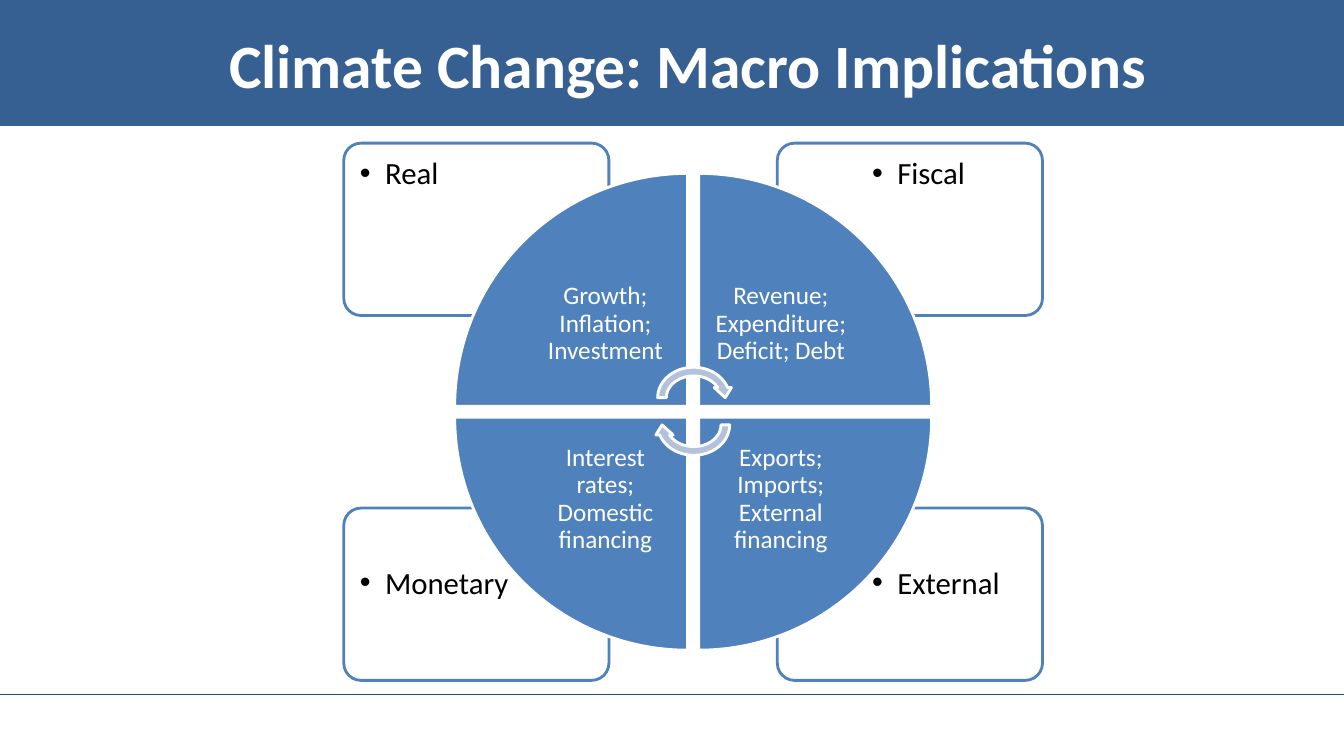
from lxml.etree import SubElement
from pptx import Presentation
from pptx.dml.color import RGBColor
from pptx.enum.shapes import MSO_CONNECTOR, MSO_SHAPE
from pptx.enum.text import MSO_ANCHOR, MSO_AUTO_SIZE, PP_ALIGN
from pptx.oxml.ns import qn
from pptx.util import Pt

PX = 9144  # EMU per px, 100 px to the inch
SLIDE_W, SLIDE_H = 1333, 750
COLORS = {"band": "376092", "rule": "1F497D", "accent": "4F81BD",
          "arrow": "B3C1DB", "white": "FFFFFF", "black": "000000"}


def rgb(name):
    return RGBColor.from_string(COLORS[name])


def emu(*lengths):
    return [length * PX for length in lengths]


class SlideBuilder:
    font = "Calibri"

    def __init__(self, slide):
        self.slide = slide
        self.shapes = slide.shapes

    def set_text(self, frame, text, size, color, align, anchor, inset, bold=False):
        frame.word_wrap = True
        frame.auto_size = MSO_AUTO_SIZE.NONE
        frame.vertical_anchor = anchor
        frame.margin_left = frame.margin_right = inset * PX
        frame.margin_top = frame.margin_bottom = inset * PX
        frame.text = text
        paragraph = frame.paragraphs[0]
        paragraph.alignment = align
        font = paragraph.runs[0].font
        font.name, font.size, font.bold = self.font, Pt(size), bold
        font.color.rgb = rgb(color)
        return paragraph

    def title(self, text, *box):
        heading = self.shapes.title
        self.shapes._spTree.append(heading._element)  # bring above the band
        heading.left, heading.top, heading.width, heading.height = emu(*box)
        self.set_text(heading.text_frame, text, 44, "white", PP_ALIGN.CENTER,
                      MSO_ANCHOR.MIDDLE, 10, bold=True)

    def shape(self, kind, *box, fill, line=None, rotation=0, alpha=None):
        figure = self.shapes.add_shape(kind, *emu(*box))
        figure.shadow.inherit = False
        figure.rotation = rotation
        figure.fill.solid()
        figure.fill.fore_color.rgb = rgb(fill)
        if alpha:
            color = figure._element.spPr.find(qn("a:solidFill"))[0]
            SubElement(color, qn("a:alpha"), val=str(alpha * 1000))
        if line:
            figure.line.color.rgb = rgb(line)
            figure.line.width = Pt(2)
        else:
            figure.line.fill.background()
        return figure

    def rule(self, y):
        footer_rule = self.shapes.add_connector(
            MSO_CONNECTOR.STRAIGHT, *emu(0, y, SLIDE_W, y))
        footer_rule.line.color.rgb = rgb("rule")
        footer_rule.line.width = Pt(0.75)
        SubElement(footer_rule._element.spPr, qn("a:effectLst"))

    def sector_label(self, text, *box):
        label = self.shapes.add_textbox(*emu(*box))
        paragraph = self.set_text(label.text_frame, text, 22, "black",
                                  PP_ALIGN.LEFT, MSO_ANCHOR.TOP, 12)
        paragraph.line_spacing = 0.9
        props = paragraph._p.get_or_add_pPr()
        props.set("marL", str(25 * PX))
        props.set("indent", str(-25 * PX))
        SubElement(props, qn("a:buFont"), typeface="Arial")
        SubElement(props, qn("a:buChar"), char="•")

    def variables(self, text, *box):
        label = self.shapes.add_textbox(*emu(*box))
        paragraph = self.set_text(label.text_frame, text, 18, "white",
                                  PP_ALIGN.CENTER, MSO_ANCHOR.MIDDLE, 14)
        paragraph.line_spacing = 0.9


def main():
    deck = Presentation()
    deck.slide_width, deck.slide_height = emu(SLIDE_W, SLIDE_H)
    page = SlideBuilder(deck.slides.add_slide(deck.slide_layouts[5]))

    # Header band, title and footer rule
    page.rule(689)
    page.shape(MSO_SHAPE.RECTANGLE, 0, 0, SLIDE_W, 125, fill="band")
    page.title("Climate Change: Macro Implications", 83, 1, 1200, 125)

    # Sectors clockwise from top left: name, variables, column, row
    sectors = [
        ("Real", "Growth; Inflation; Investment", 0, 0),
        ("Fiscal", "Revenue; Expenditure; Deficit; Debt", 1, 0),
        ("External", "Exports; Imports; External financing", 1, 1),
        ("Monetary", "Interest rates; Domestic financing", 0, 1),
    ]

    # Corner cards, with labels kept clear of the wheel
    for name, _, column, row in reversed(sectors):
        card = page.shape(MSO_SHAPE.ROUNDED_RECTANGLE, 341 + 430 * column,
                          142 + 362 * row, 263, 171,
                          fill="white", line="accent", alpha=90)
        card.adjustments[0] = 0.1
        page.sector_label(name, 345 + 508 * column, 145 + 406 * row, 177, 121)

    # Wheel: one quarter per sector, text against the hub
    wedge, inner, step = 231, 163, 242
    for quarter, (_, variables, column, row) in enumerate(sectors):
        left, top = 451 + step * column, 172 + step * row
        page.shape(MSO_SHAPE.PIE_WEDGE, left, top, wedge, wedge,
                   fill="accent", line="white", rotation=90 * quarter)
        page.variables(variables, left + (wedge - inner) * (1 - column),
                       top + (wedge - inner) * (1 - row), inner, inner)

    # Cycle arrows at the hub
    for top, rotation in ((360, 0), (387, 180)):
        page.shape(MSO_SHAPE.CIRCULAR_ARROW, 648, top, 80, 69,
                   fill="arrow", line="white", rotation=rotation)

    deck.save("out.pptx")


if __name__ == "__main__":
    main()
